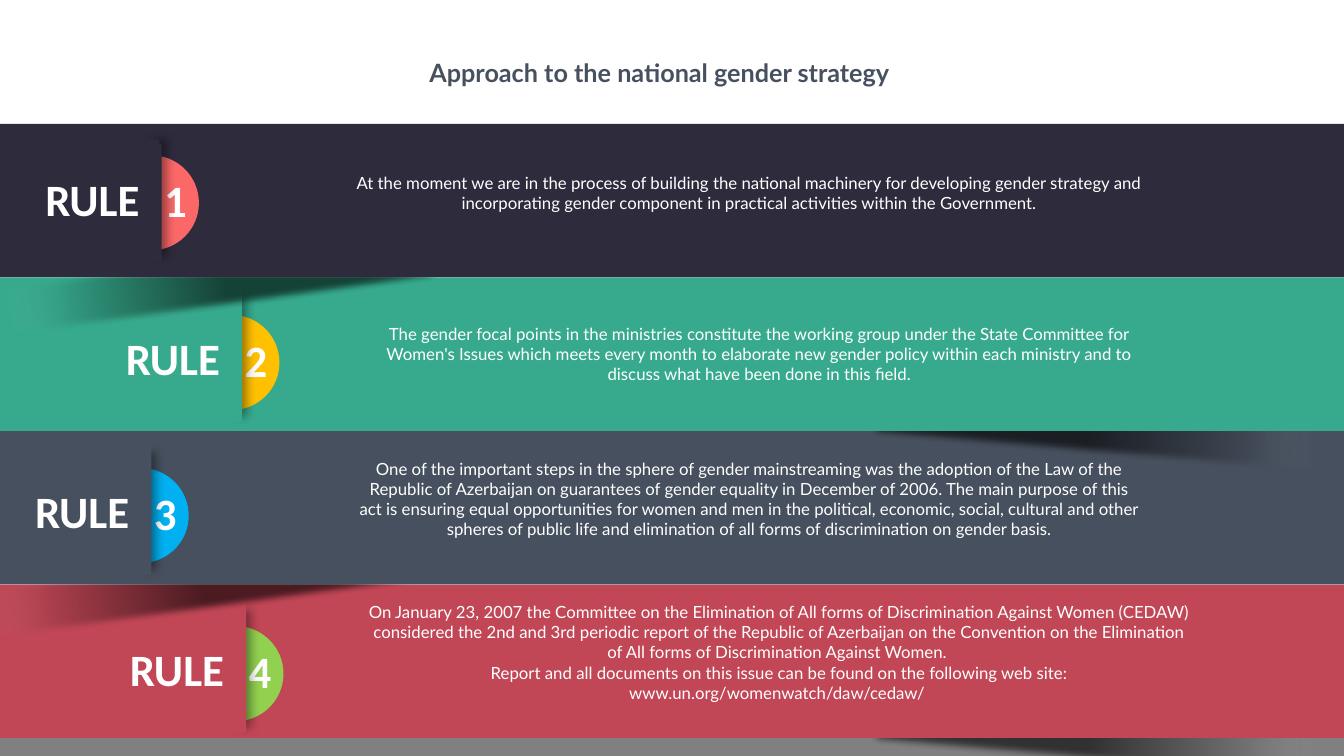
import pptx
import pptx.dml.color
import pptx.enum.shapes
import pptx.enum.text
import pptx.oxml
import pptx.oxml.ns
import pptx.util

Pt = pptx.util.Pt
RGBColor = pptx.dml.color.RGBColor
MSO_SHAPE = pptx.enum.shapes.MSO_SHAPE
PP_ALIGN = pptx.enum.text.PP_ALIGN
qn = pptx.oxml.ns.qn
DRAWING_NS = pptx.oxml.ns.nsdecls("a")

WHITE = RGBColor(0xFF, 0xFF, 0xFF)
GREY = RGBColor(0x80, 0x80, 0x80)
NAVY = RGBColor(0x2E, 0x2B, 0x3D)
GREEN = RGBColor(0x37, 0xAA, 0x8D)
SLATE = RGBColor(0x47, 0x50, 0x5E)
RED = RGBColor(0xC1, 0x47, 0x56)
CORAL = RGBColor(0xFC, 0x68, 0x68)
AMBER = RGBColor(0xFF, 0xC0, 0x00)
BLUE = RGBColor(0x00, 0xB0, 0xF0)
LIME = RGBColor(0x92, 0xD0, 0x50)

SLIDE_WIDTH, SLIDE_HEIGHT = 960, 540
BAND_TOP, BAND_PITCH, BAND_HEIGHT = 88.5, 109.7, 109.6
DISC_RADIUS = 33.9
ARC_HANDLE = 0.5523  # control point distance of a quarter circle, in radii

# Cast shadows: left, offset of the centre from the band's bottom, width, height, rotation
CAST_LEFT_HIGH = (1.4, 3.1, 311.8, 42.5, 172.2)
CAST_LEFT_LOW = (-15.1, 0.5, 311.8, 42.5, 172.2)
CAST_RIGHT = (622, -8.5, 322.6, 54.7, 5)

# Each rule: band colour, slit colour, disc colour, disc left, disc offset from band top,
# rise of the cover above the disc, cast shadow, text box, paragraphs
RULES = [
    (NAVY, NAVY, CORAL, 108.2, 22.5, 8, CAST_LEFT_HIGH, (219.1, 119.5, 632.2, 36),
     ["At the moment we are in the process of building the national machinery for developing "
      "gender strategy and incorporating gender component in practical activities within the "
      "Government."]),
    (GREEN, GREEN, AMBER, 165.7, 26.9, 21, CAST_RIGHT, (253.4, 227.5, 578.2, 51),
     ["The gender focal points in the ministries constitute the working group under the State "
      "Committee for Women's Issues which meets every month to elaborate new gender policy "
      "within each ministry and to discuss what have been done in this field."]),
    (SLATE, GREEN, BLUE, 100.9, 26.5, 21, CAST_LEFT_LOW, (249.1, 324, 572.4, 65.5),
     ["One of the important steps in the sphere of gender mainstreaming was the adoption of "
      "the Law of the Republic of Azerbaijan on guarantees of gender equality in December of "
      "2006. The main purpose of this act is ensuring equal opportunities for women and men in "
      "the political, economic, social, cultural and other spheres of public life and "
      "elimination of all forms of discrimination on gender basis."]),
    (RED, GREEN, LIME, 168.6, 29.7, 21, CAST_RIGHT, (253.2, 426.3, 607, 80),
     ["On January 23, 2007 the Committee on the Elimination of All forms of Discrimination "
      "Against Women (CEDAW) considered the 2nd and 3rd periodic report of the Republic of "
      "Azerbaijan on the Convention on the Elimination of All forms of Discrimination Against "
      "Women. ",
      "Report and all documents on this issue can be found on the following web site: "
      "www.un.org/womenwatch/daw/cedaw/ "]),
]


def write_text(frame, paragraphs, font="Calibri", size=32, color=WHITE, bold=True,
               align=PP_ALIGN.LEFT, wrap=True):
    frame.word_wrap = wrap
    frame.auto_size = pptx.enum.text.MSO_AUTO_SIZE.SHAPE_TO_FIT_TEXT
    frame.vertical_anchor = pptx.enum.text.MSO_ANCHOR.TOP
    for index, words in enumerate(paragraphs):
        paragraph = frame.add_paragraph() if index else frame.paragraphs[0]
        paragraph.alignment = align
        run = paragraph.add_run()
        run.text = words
        run.font.name, run.font.size, run.font.bold = font, Pt(size), bold
        run.font.color.rgb = color


def add_label(shapes, box, paragraphs, **text_format):
    label = shapes.add_textbox(*map(Pt, box))
    write_text(label.text_frame, paragraphs, **text_format)


def paint(shape, color):
    """Give the shape a plain fill, or none, without line or shadow."""
    if color is None:
        shape.fill.background()
    else:
        shape.fill.solid()
        shape.fill.fore_color.rgb = color
    shape.line.fill.background()
    shape.shadow.inherit = False
    return shape


def add_panel(shapes, box, color, preset=MSO_SHAPE.RECTANGLE):
    return paint(shapes.add_shape(preset, *map(Pt, box)), color)


def add_effect(shape, xml):
    effects = shape.element.spPr.find(qn("a:effectLst"))
    effects.append(pptx.oxml.parse_xml(xml))


def add_cast_shadow(shapes, band_bottom, cast):
    """Draw the soft slanted shadow that shows below a band's lower edge."""
    left, offset, width, height, rotation = cast
    box = (left, band_bottom + offset - height / 2, width, height)
    shadow = add_panel(shapes, box, None, MSO_SHAPE.ROUNDED_RECTANGLE)
    shadow.adjustments[0] = 0
    shadow.rotation = rotation
    stops = "".join(
        f'<a:gs pos="{position * 1000}"><a:srgbClr val="{color}">'
        f'<a:alpha val="{alpha * 1000}"/></a:srgbClr></a:gs>'
        for position, color, alpha in [(0, "F6F8FC", 0), (17, "000000", 11), (51, "000000", 61)])
    gradient = pptx.oxml.parse_xml(
        f'<a:gradFill {DRAWING_NS} rotWithShape="1"><a:gsLst>{stops}</a:gsLst>'
        '<a:lin ang="10800000" scaled="0"/></a:gradFill>')
    properties = shadow.element.spPr
    properties.replace(properties.find(qn("a:noFill")), gradient)
    add_effect(shadow, f'<a:softEdge {DRAWING_NS} rad="{Pt(5)}"/>')


def add_half_disc(shapes, left, top, color):
    """Draw the right half of a disc as two quarter-circle curves."""
    corners = [(1, 1), (0, 2)]
    builder = shapes.build_freeform(Pt(left), Pt(top), scale=1.0)
    builder.add_line_segments(
        [(Pt(left + x * DISC_RADIUS), Pt(top + y * DISC_RADIUS)) for x, y in corners], close=True)
    disc = paint(builder.convert_to_shape(), color)
    handles = [[(ARC_HANDLE, 0), (1, 1 - ARC_HANDLE)], [(1, 1 + ARC_HANDLE), (ARC_HANDLE, 2)]]
    sides = list(disc.element.iter(qn("a:lnTo")))
    for side, controls, corner in zip(sides, handles, corners):
        points = "".join(f'<a:pt x="{Pt(x * DISC_RADIUS)}" y="{Pt(y * DISC_RADIUS)}"/>'
                         for x, y in controls + [corner])
        curve = pptx.oxml.parse_xml(f'<a:cubicBezTo {DRAWING_NS}>{points}</a:cubicBezTo>')
        side.getparent().replace(side, curve)


def add_numbered_tab(shapes, left, top, number, band_color, slit_color, disc_color, cover_rise):
    """Place the word RULE and its number on a half disc that slides out of a slit."""
    add_half_disc(shapes, left, top, disc_color)
    add_label(shapes, (left + 1.9, top + 8.7, 33.8, 46), [str(number)])
    slit = add_panel(shapes, (left - 3.8, top - 11.5, 9.4, 84.2), slit_color)
    add_effect(slit, f'<a:outerShdw {DRAWING_NS} blurRad="{Pt(7)}" '
                     f'dist="{Pt(5)}" dir="0" algn="l" rotWithShape="0">'
                     '<a:srgbClr val="000000"><a:alpha val="40000"/></a:srgbClr></a:outerShdw>')
    add_panel(shapes, (left - 23, top - cover_rise, 30.2, 76.2 + cover_rise), band_color)
    add_label(shapes, (left - 82.9, top + 7.8, 83.5, 46), ["RULE"], wrap=False)


def add_rule(slide, number, rule):
    (band_color, slit_color, disc_color, disc_left, disc_offset, cover_rise, cast,
     text_box, paragraphs) = rule
    top = BAND_TOP + (number - 1) * BAND_PITCH
    shapes = slide.shapes.add_group_shape().shapes
    add_cast_shadow(shapes, top + BAND_HEIGHT, cast)
    add_panel(shapes, (0, top, SLIDE_WIDTH, BAND_HEIGHT), band_color)
    add_numbered_tab(shapes, disc_left, top + disc_offset, number,
                     band_color, slit_color, disc_color, cover_rise)
    add_label(shapes, text_box, paragraphs, font="Lato", size=12, bold=False,
              align=PP_ALIGN.CENTER)


def add_title(slide, box):
    title = slide.shapes.title
    title.left, title.top, title.width, title.height = map(Pt, box)
    write_text(title.text_frame, ["Approach to the national gender strategy"],
               font="Lato", size=18, color=SLATE, wrap=False)


def main():
    deck = pptx.Presentation()
    deck.slide_width, deck.slide_height = Pt(SLIDE_WIDTH), Pt(SLIDE_HEIGHT)
    slide = deck.slides.add_slide(deck.slide_layouts[5])
    add_title(slide, (299.5, 37.4, 370, 28.8))
    add_panel(slide.shapes, (0, 501, SLIDE_WIDTH, 39), GREY)
    # Upper bands overlap the shadows they cast, so the lowest is placed first
    for number in range(len(RULES), 0, -1):
        add_rule(slide, number, RULES[number - 1])
    deck.save("out.pptx")


if __name__ == "__main__":
    main()
